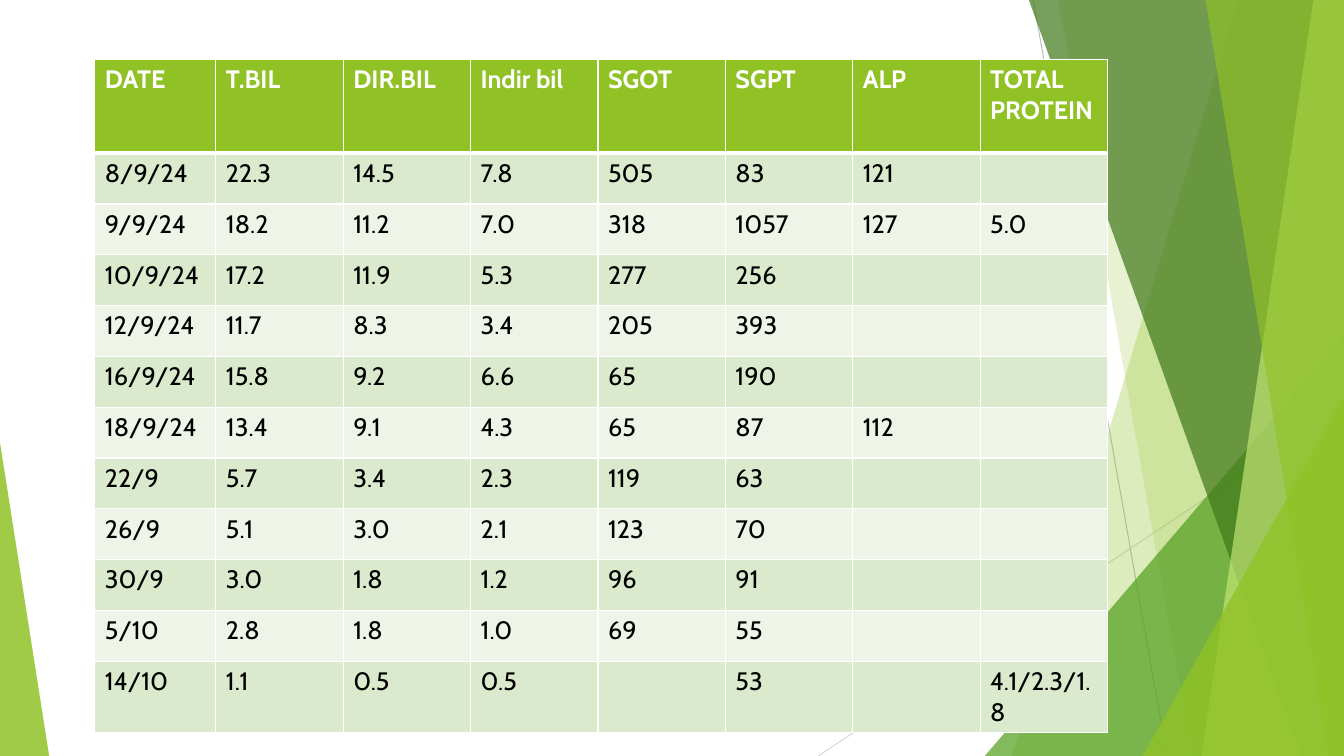
from lxml import etree
from pptx import Presentation
from pptx import util as u
from pptx.dml.color import RGBColor
from pptx.enum import shapes
from pptx.oxml import ns

COLORS = {
    "white": "FFFFFF", "black": "000000",
    "lime": "90C226", "leaf": "54A021", "forest": "3F7819", "pale": "C0E474",
    "band_dark": "DBE9CD", "band_light": "EEF4E8",
    "line_dark": "BFBFBF", "line_light": "D9D9D9",
}
WIDTH, HEIGHT = 33.87, 19.05

HEADER = ["DATE", "T.BIL", "DIR.BIL", "Indir bil", "SGOT", "SGPT", "ALP", "TOTAL PROTEIN"]
RESULTS = [
    ["8/9/24", "22.3", "14.5", "7.8", "505", "83", "121", ""],
    ["9/9/24", "18.2", "11.2", "7.0", "318", "1057", "127", "5.0"],
    ["10/9/24", "17.2", "11.9", "5.3", "277", "256", "", ""],
    ["12/9/24", "11.7", "8.3", "3.4", "205", "393", "", ""],
    ["16/9/24", "15.8", "9.2", "6.6", "65", "190", "", ""],
    ["18/9/24", "13.4", "9.1", "4.3", "65", "87", "112", ""],
    ["22/9", "5.7", "3.4", "2.3", "119", "63", "", ""],
    ["26/9", "5.1", "3.0", "2.1", "123", "70", "", ""],
    ["30/9", "3.0", "1.8", "1.2", "96", "91", "", ""],
    ["5/10", "2.8", "1.8", "1.0", "69", "55", "", ""],
    ["14/10", "1.1", "0.5", "0.5", "", "53", "", "4.1/2.3/1.8"],
]


def rgb(name):
    return RGBColor.from_string(COLORS[name])


class SlideBuilder:
    font = "Cabin"
    size = u.Pt(18)

    def __init__(self, slide):
        self.slide = slide

    def line(self, x1, y1, x2, y2, color):
        sp = self.slide.shapes.add_connector(
            shapes.MSO_CONNECTOR.STRAIGHT, u.Cm(x1), u.Cm(y1), u.Cm(x2), u.Cm(y2))
        sp.line.color.rgb = rgb(color)
        sp.line.width = u.Pt(0.75)
        etree.SubElement(sp._element.spPr, ns.qn("a:effectLst"))

    def paint(self, sp, color, opacity):
        sp.shadow.inherit = False
        sp.line.fill.background()
        sp.fill.solid()
        sp.fill.fore_color.rgb = rgb(color)
        clr = sp._element.spPr.find(".//" + ns.qn("a:srgbClr"))
        etree.SubElement(clr, ns.qn("a:alpha"), val=str(opacity * 1000))

    def panel(self, top_x, bottom_x, color, opacity):
        """Full-height panel from a slanted left side to the slide's right edge."""
        points = [(WIDTH, 0), (WIDTH, HEIGHT), (bottom_x, HEIGHT)]
        form = self.slide.shapes.build_freeform(u.Cm(top_x), 0)
        form.add_line_segments([(u.Cm(x), u.Cm(y)) for x, y in points], close=True)
        self.paint(form.convert_to_shape(), color, opacity)

    def triangle(self, left, top, width, apex, color, opacity):
        """Triangle standing on the slide's bottom edge."""
        sp = self.slide.shapes.add_shape(
            shapes.MSO_SHAPE.ISOSCELES_TRIANGLE,
            u.Cm(left), u.Cm(top), u.Cm(width), u.Cm(HEIGHT - top))
        sp.adjustments[0] = apex
        self.paint(sp, color, opacity)

    def borders(self, cell, **widths):
        tc_pr = cell._tc.get_or_add_tcPr()
        for side, points in widths.items():
            ln = etree.SubElement(tc_pr, ns.qn("a:ln" + side), w=str(u.Pt(points)))
            fill = etree.SubElement(ln, ns.qn("a:solidFill"))
            etree.SubElement(fill, ns.qn("a:srgbClr"), val=COLORS["white"])

    def cell(self, cell, content, fill, color, bold, top, bottom):
        self.borders(cell, L=1, R=1, T=top, B=bottom)
        cell.fill.solid()
        cell.fill.fore_color.rgb = rgb(fill)
        p = cell.text_frame.paragraphs[0]
        p.text = content
        p.font.name, p.font.size, p.font.bold = self.font, self.size, bold
        p.font.color.rgb = rgb(color)

    def table(self, left, top, widths, heights, rows):
        frame = self.slide.shapes.add_table(
            len(rows), len(widths), u.Cm(left), u.Cm(top),
            u.Cm(sum(widths)), u.Cm(sum(heights)))
        table = frame.table
        table.horz_banding = False
        for column, width in zip(table.columns, widths):
            column.width = u.Cm(width)
        for i, (row, height) in enumerate(zip(rows, heights)):
            table.rows[i].height = u.Cm(height)
            head = i == 0
            fill = "lime" if head else "band_dark" if i % 2 else "band_light"
            for j, content in enumerate(row):
                self.cell(table.cell(i, j), content, fill,
                          color="white" if head else "black", bold=head,
                          top=3 if i == 1 else 1, bottom=3 if head else 1)


def main():
    prs = Presentation()
    prs.slide_width, prs.slide_height = u.Cm(WIDTH), u.Cm(HEIGHT)
    s = SlideBuilder(prs.slides.add_slide(prs.slide_layouts[6]))

    # Thin background lines
    s.line(26.04, 0, 29.41, HEIGHT, "line_dark")
    s.line(WIDTH, 10.24, 20.62, HEIGHT, "line_light")

    # Translucent facets, back to front
    s.panel(31.19, 25.5, "lime", 30)
    s.panel(26.67, 30.05, "lime", 20)
    s.triangle(24.82, 8.46, WIDTH - 24.82, 1, "leaf", 72)
    s.panel(25.93, 32.79, "forest", 70)
    s.panel(33.1, 30.28, "pale", 70)
    s.panel(30.38, 33.48, "lime", 65)
    s.triangle(28.8, 9.98, WIDTH - 28.8, 1, "lime", 80)
    s.triangle(0, 11.15, 1.24, 0, "lime", 85)

    # Liver function results
    s.table(2.39, 1.5, [3.05] + [3.21] * 7, [2.36] + [1.28] * len(RESULTS),
            [HEADER] + RESULTS)

    prs.save("out.pptx")


if __name__ == "__main__":
    main()
